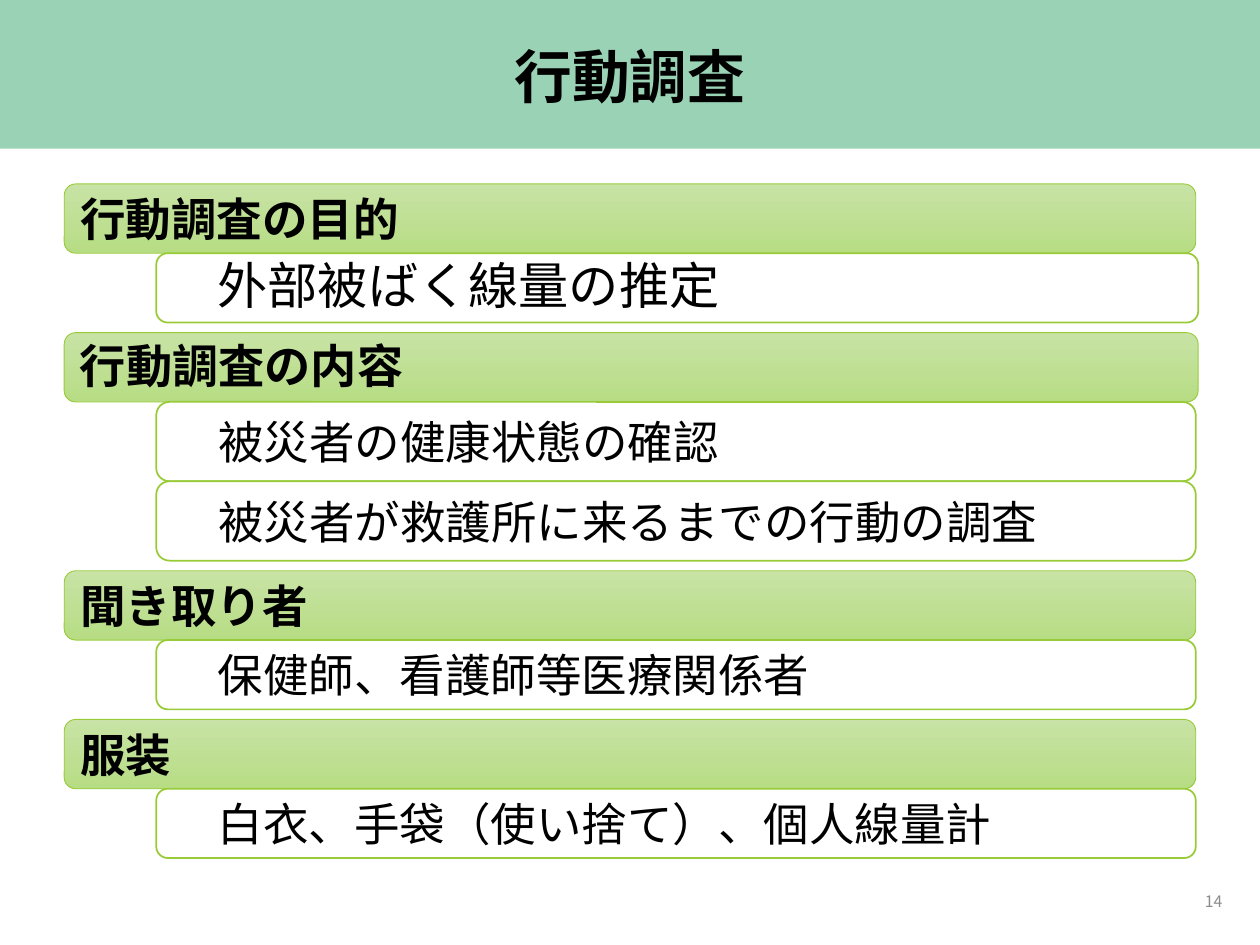
from dataclasses import dataclass

import lxml.etree
import pptx
import pptx.dml.color
import pptx.enum.shapes
import pptx.enum.text
import pptx.oxml.ns
import pptx.util

RGBColor = pptx.dml.color.RGBColor
ANCHOR = pptx.enum.text.MSO_ANCHOR
ALIGN = pptx.enum.text.PP_ALIGN
SHAPE = pptx.enum.shapes.MSO_SHAPE
Inches = pptx.util.Inches
Pt = pptx.util.Pt

BLACK = RGBColor(0x00, 0x00, 0x00)
WHITE = RGBColor(0xFF, 0xFF, 0xFF)
GREY = RGBColor(0x8C, 0x8C, 0x8C)
BANNER_GREEN = RGBColor(0x37, 0xA7, 0x6F)
LINE_GREEN = RGBColor(0x99, 0xCB, 0x38)
HEADING_TOP = RGBColor(0xC8, 0xE3, 0xA5)
HEADING_BOTTOM = RGBColor(0xB7, 0xDD, 0x84)

CJK = "Noto Sans CJK JP"
LATIN = "Lato"

WIDTH, HEIGHT = 10, 7.5
HEADING_LEFT, ITEM_LEFT = 0.51, 1.24
RIGHT = 9.49
TOP = 1.46
ROW, TALL_ROW = 0.55, 0.63
SECTION_GAP = 0.08
INSET, ITEM_INSET = 0.1, 0.46


@dataclass
class Bar:
    text: str
    size: float = 26
    font: str = CJK
    height: float = ROW
    right: float = RIGHT
    anchor: ANCHOR = ANCHOR.MIDDLE
    line_spacing: float = 1.0
    space_before: float = 0


@dataclass
class Section:
    heading: Bar
    items: list[Bar]


SECTIONS = [
    Section(Bar("行動調査の目的", font=LATIN),
            [Bar("外部被ばく線量の推定", size=28.7, right=RIGHT + 0.02,
                 anchor=ANCHOR.BOTTOM, line_spacing=0.7, space_before=7.5)]),
    Section(Bar("行動調査の内容", size=26.4, font=LATIN, right=RIGHT + 0.02,
                anchor=ANCHOR.BOTTOM, line_spacing=0.8, space_before=5),
            [Bar("被災者の健康状態の確認", height=TALL_ROW),
             Bar("被災者が救護所に来るまでの行動の調査", height=TALL_ROW)]),
    Section(Bar("聞き取り者"), [Bar("保健師、看護師等医療関係者")]),
    Section(Bar("服装"), [Bar("白衣、手袋（使い捨て）、個人線量計")]),
]


def write(sp, text: str, *, size: float, font: str = CJK,
          color: RGBColor = BLACK, bold: bool = False,
          align: ALIGN = ALIGN.LEFT, anchor: ANCHOR = ANCHOR.MIDDLE,
          line_spacing: float = 1.0, space_before: float = 0,
          inset: float = INSET) -> None:
    tf = sp.text_frame
    tf.word_wrap = True
    tf.vertical_anchor = anchor
    tf.margin_left = Inches(inset)
    p = tf.paragraphs[0]
    p.alignment = align
    p.line_spacing = line_spacing
    p.space_before = Pt(space_before)
    r = p.add_run()
    r.text = text
    r.font.size = Pt(size)
    r.font.bold = bold
    r.font.name = font
    r.font.color.rgb = color
    east_asian = lxml.etree.SubElement(r.font._element, pptx.oxml.ns.qn("a:ea"))
    east_asian.set("typeface", CJK)


def add_shape(s, kind: SHAPE, left: float, top: float, width: float, height: float):
    sp = s.shapes.add_shape(kind, Inches(left), Inches(top), Inches(width), Inches(height))
    sp.shadow.inherit = False
    return sp


def add_textbox(s, left: float, top: float, width: float, height: float):
    return s.shapes.add_textbox(Inches(left), Inches(top), Inches(width), Inches(height))


def add_banner(s) -> None:
    sp = add_shape(s, SHAPE.RECTANGLE, 0, 0, WIDTH, 1.18)
    sp.line.fill.background()
    sp.fill.solid()
    sp.fill.fore_color.rgb = BANNER_GREEN
    color = sp.fill._xPr.find(".//" + pptx.oxml.ns.qn("a:srgbClr"))
    lxml.etree.SubElement(color, pptx.oxml.ns.qn("a:alpha")).set("val", "50000")


def add_bar(s, bar: Bar, top: float, is_heading: bool) -> float:
    """Draw one bar and return the position of its bottom edge."""
    left = HEADING_LEFT if is_heading else ITEM_LEFT
    sp = add_shape(s, SHAPE.ROUNDED_RECTANGLE, left, top, bar.right - left, bar.height)
    sp.line.color.rgb = LINE_GREEN
    sp.line.width = Pt(0.5 if is_heading else 1)
    if is_heading:
        sp.fill.gradient()
        sp.fill.gradient_angle = 270
        for stop, color in zip(sp.fill.gradient_stops, (HEADING_TOP, HEADING_BOTTOM)):
            stop.color.rgb = color
    else:
        sp.fill.solid()
        sp.fill.fore_color.rgb = WHITE
    write(sp, bar.text, size=bar.size, font=bar.font, bold=is_heading,
          anchor=bar.anchor, line_spacing=bar.line_spacing,
          space_before=bar.space_before,
          inset=INSET if is_heading else ITEM_INSET)
    return top + bar.height


def main() -> None:
    prs = pptx.Presentation()
    prs.slide_width, prs.slide_height = Inches(WIDTH), Inches(HEIGHT)
    s = prs.slides.add_slide(prs.slide_layouts[6])

    add_banner(s)
    write(add_textbox(s, 0.69, 0.21, 8.62, 0.85), "行動調査",
          size=33, bold=True, align=ALIGN.CENTER, line_spacing=0.9)

    top = TOP
    for section in SECTIONS:
        top = add_bar(s, section.heading, top, is_heading=True)
        for item in section.items:
            top = add_bar(s, item, top, is_heading=False)
        top += SECTION_GAP

    write(add_textbox(s, 7.55, 6.95, 2.25, 0.4), "14",
          size=9, color=GREY, align=ALIGN.RIGHT)
    prs.save("out.pptx")


if __name__ == "__main__":
    main()
